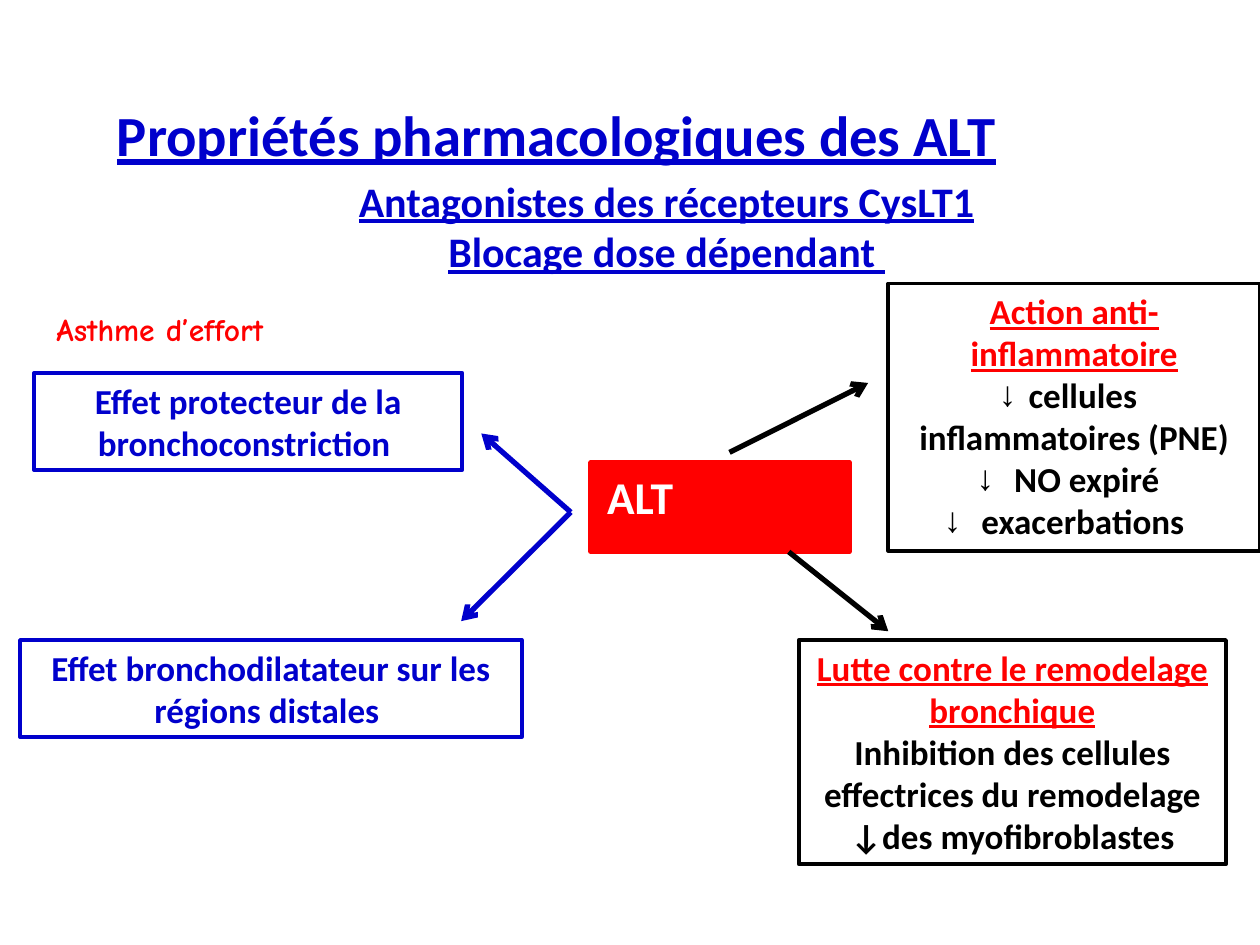
from dataclasses import dataclass
from typing import Optional

from lxml.etree import SubElement
from pptx import Presentation
from pptx.dml.color import RGBColor
from pptx.enum.shapes import MSO_CONNECTOR, MSO_SHAPE
from pptx.enum.text import MSO_ANCHOR, MSO_AUTO_SIZE, PP_ALIGN
from pptx.oxml.ns import qn
from pptx.util import Inches, Pt

BLUE = RGBColor(0x00, 0x00, 0xCC)
RED = RGBColor(0xFF, 0x00, 0x00)
BLACK = RGBColor(0x00, 0x00, 0x00)
WHITE = RGBColor(0xFF, 0xFF, 0xFF)
WIDTH, HEIGHT = Inches(10), Inches(7.5)


@dataclass
class Line:
    text: str
    color: RGBColor = BLUE
    under: bool = False
    bullet: str = ""
    before: float = 0
    indent: float = 0


@dataclass
class Box:
    """A block of text; area is left, top, width, height in % of the slide."""
    area: tuple[float, float, float, float]
    lines: list[Line]
    size: float = 20
    font: str = "Calibri"
    align: PP_ALIGN = PP_ALIGN.CENTER
    anchor: MSO_ANCHOR = MSO_ANCHOR.TOP
    edge: Optional[RGBColor] = None
    weight: float = 2.25
    fill: Optional[RGBColor] = None
    wrap: bool = True
    grow: bool = True


@dataclass
class Arrow:
    """Ends are x, y in % of the slide."""
    start: tuple[float, float]
    end: tuple[float, float]
    color: RGBColor


BOXES = [
    Box((8.3, 3.73, 85, 14.67),
        [Line("Propriétés pharmacologiques des ALT", under=True)],
        size=32.4, align=PP_ALIGN.LEFT, anchor=MSO_ANCHOR.BOTTOM, grow=False),
    Box((46.9, 48.93, 20.5, 9.47),
        [Line("ALT", WHITE, before=6, indent=0.03)],
        size=26, align=PP_ALIGN.LEFT, edge=RED, weight=3, fill=RED, grow=False),
    Box((1.6, 67.73, 39.8, 10.27),
        [Line("Effet bronchodilatateur sur les régions distales ")], edge=BLUE),
    Box((2.7, 39.47, 34, 10.27),
        [Line("Effet protecteur de la bronchoconstriction ")], edge=BLUE),
    Box((27.2, 17.87, 51.4, 12.13),
        [Line("Antagonistes des récepteurs CysLT1", under=True),
         Line("Blocage dose dépendant ", under=True)],
        size=24, wrap=False),
    Box((70.5, 30, 29.5, 28.27),
        [Line("Action anti-inflammatoire", RED, True),
         Line("cellules inflammatoires (PNE)", BLACK, bullet="↓"),
         Line(" NO expiré", BLACK, bullet="↓"),
         Line(" exacerbations ", BLACK, bullet="↓")],
        edge=BLACK),
    Box((63.4, 67.73, 33.9, 23.73),
        [Line("Lutte contre le remodelage bronchique", RED, True),
         Line("Inhibition des cellules effectrices du remodelage", BLACK),
         Line("↓des myofibroblastes", BLACK)],
        edge=BLACK),
    Box((3.5, 32.13, 22, 5.33), [Line("Asthme d’effort", RED)],
        size=18, font="Comic Neue", align=PP_ALIGN.LEFT, wrap=False),
]

ARROWS = [
    Arrow((45.3, 54.2), (36.6, 65.73), BLUE),
    Arrow((45.3, 54.2), (38.2, 45.87), BLUE),
    Arrow((57.9, 47.87), (68.9, 40.53), BLACK),
    Arrow((62.6, 58.4), (70.5, 66.8), BLACK),
]


def place(x: float, y: float) -> tuple[int, int]:
    """Turn shares in % into slide lengths."""
    return round(WIDTH * x / 100), round(HEIGHT * y / 100)


def write(par, line: Line, box: Box) -> None:
    par.text = line.text
    par.alignment = box.align
    par.space_before = Pt(line.before)
    props = par._p.get_or_add_pPr()
    if line.indent:
        props.set("marL", str(Inches(line.indent)))
        props.set("indent", "0")
    if line.bullet:
        SubElement(props, qn("a:buFont")).set("typeface", "Arial")
        SubElement(props, qn("a:buChar")).set("char", line.bullet)
    for run in par.runs:
        font = run.font
        font.name, font.size, font.bold = box.font, Pt(box.size), True
        font.underline = line.under
        font.color.rgb = line.color


def draw_box(slide, box: Box) -> None:
    left, top, width, height = box.area
    area = (*place(left, top), *place(width, height))
    if box.edge is None:
        shape = slide.shapes.add_textbox(*area)
    else:
        shape = slide.shapes.add_shape(MSO_SHAPE.RECTANGLE, *area)
        shape.shadow.inherit = False
        shape.line.color.rgb = box.edge
        shape.line.width = Pt(box.weight)
        if box.fill is None:
            shape.fill.background()
        else:
            shape.fill.solid()
            shape.fill.fore_color.rgb = box.fill
    frame = shape.text_frame
    frame.word_wrap = box.wrap
    frame.vertical_anchor = box.anchor
    frame.auto_size = (MSO_AUTO_SIZE.SHAPE_TO_FIT_TEXT if box.grow
                       else MSO_AUTO_SIZE.NONE)
    for i, line in enumerate(box.lines):
        par = frame.add_paragraph() if i else frame.paragraphs[0]
        write(par, line, box)


def draw_arrow(slide, arrow: Arrow) -> None:
    link = slide.shapes.add_connector(
        MSO_CONNECTOR.STRAIGHT, *place(*arrow.start), *place(*arrow.end))
    link.line.color.rgb = arrow.color
    link.line.width = Pt(3)
    SubElement(link.line._get_or_add_ln(), qn("a:tailEnd")).set("type", "arrow")
    SubElement(link._element.spPr, qn("a:effectLst"))


def main() -> None:
    deck = Presentation()
    deck.slide_width, deck.slide_height = WIDTH, HEIGHT
    slide = deck.slides.add_slide(deck.slide_layouts[6])
    for box in BOXES:
        draw_box(slide, box)
    for arrow in ARROWS:
        draw_arrow(slide, arrow)
    deck.save("out.pptx")


if __name__ == "__main__":
    main()
